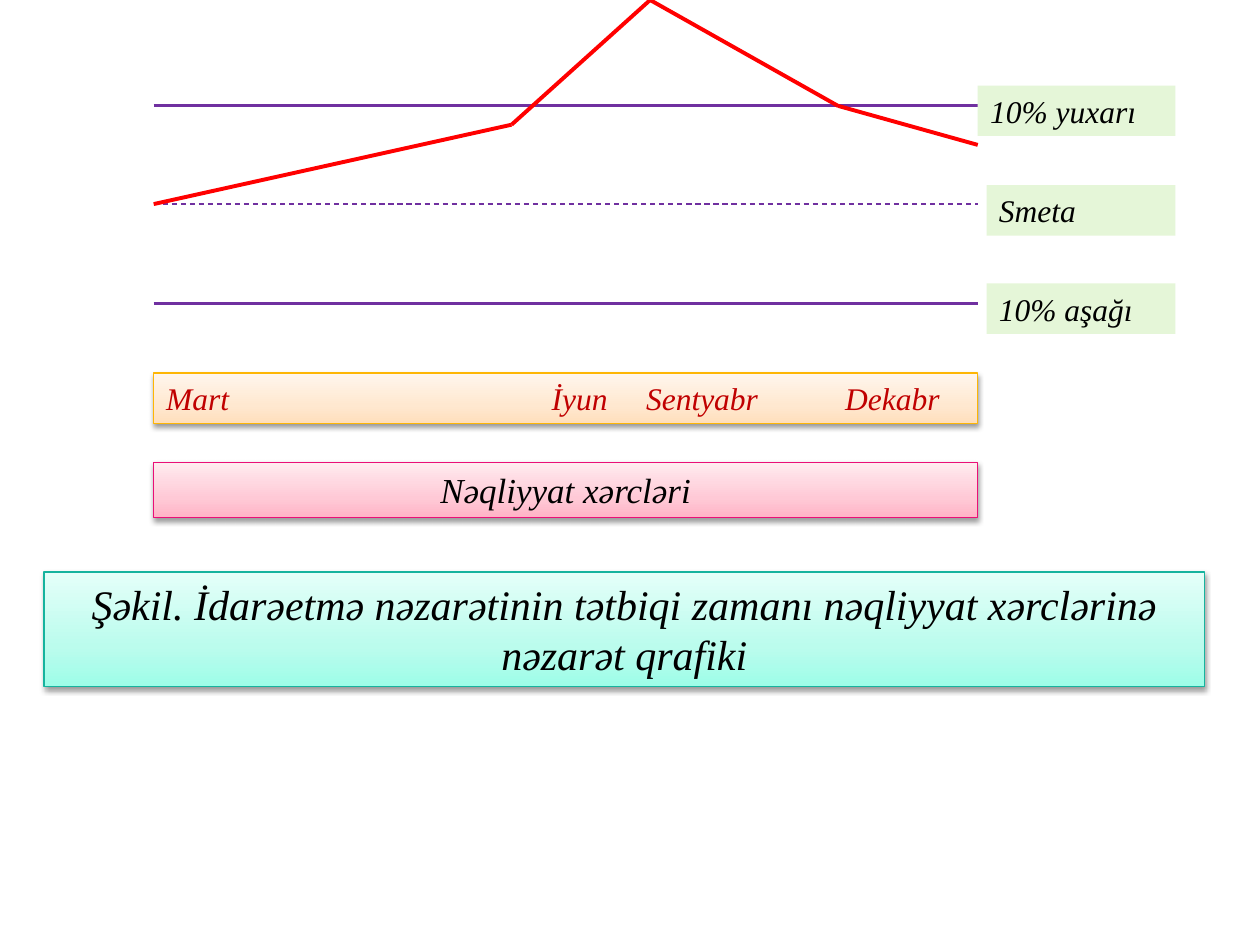
from copy import deepcopy
from dataclasses import dataclass
from itertools import pairwise

from lxml import etree
from pptx import Presentation
from pptx import util as u
from pptx.dml.color import RGBColor
from pptx.enum import dml, shapes, text
from pptx.oxml.ns import qn


@dataclass(frozen=True)
class Theme:
    font: str = "Times New Roman"
    ink: str = "000000"
    month: str = "C00000"
    limit: str = "7030A0"
    cost: str = "FF0000"
    tag: str = "E5F6D8"
    peach: tuple = ("FFDFBC", "FFE8D0", "FFF6ED")
    pink: tuple = ("FFB3C6", "FFC9D6", "FFEBEF")
    mint: tuple = ("9DFDE8", "BBFCED", "E4FFF9")
    gold: str = "FEB604"
    rose: str = "EA0F77"
    teal: str = "16B39E"
    small: int = 18
    mid: int = 20
    large: int = 24


T = Theme()
LEFT, RIGHT = 1.22, 7.76
STOPS = (0, 0.35, 1)


@dataclass(frozen=True)
class Box:
    words: str
    x: float
    y: float
    w: float
    h: float = 0.4
    size: int = T.small
    ink: str = T.ink
    mid: bool = False


@dataclass(frozen=True)
class Bar:
    box: Box
    grad: tuple
    edge: str
    tabs: tuple = ()


@dataclass(frozen=True)
class Limit:
    y: float
    width: float = 1.5
    dash: bool = False


LIMITS = [Limit(1.62, 0.75, True), Limit(0.84), Limit(2.41)]
COSTS = [(LEFT, 1.62), (4.06, 0.99), (5.16, 0), (6.65, 0.84), (RIGHT, 1.15)]
TAGS = [
    Box("10% yuxarı", 7.76, 0.68, 1.57),
    Box("Smeta", 7.83, 1.47, 1.5),
    Box("10% aşağı", 7.83, 2.25, 1.5),
]
BARS = [
    Bar(Box("Mart\tİyun\tSentyabr\tDekabr", LEFT, 2.96, RIGHT - LEFT, ink=T.month),
        T.peach, T.gold, (3.06, 3.81, 5.39)),
    Bar(Box("Nəqliyyat xərcləri", LEFT, 3.67, RIGHT - LEFT, 0.44, T.mid, mid=True),
        T.pink, T.rose),
    Bar(Box("Şəkil. İdarəetmə nəzarətinin tətbiqi zamanı nəqliyyat xərclərinə "
            "nəzarət qrafiki", 0.35, 4.54, 9.21, 0.91, T.large, mid=True),
        T.mint, T.teal),
]


def rgb(code: str) -> RGBColor:
    return RGBColor.from_string(code)


def draw_line(slide, start: tuple, end: tuple, color: str, width: float, dash: bool = False):
    line = slide.shapes.add_connector(
        shapes.MSO_CONNECTOR.STRAIGHT, *map(u.Inches, (*start, *end)))
    line.line.color.rgb = rgb(color)
    line.line.width = u.Pt(width)
    if dash:
        line.line.dash_style = dml.MSO_LINE.DASH
    etree.SubElement(line._element.spPr, qn("a:effectLst"))


def draw_box(slide, box: Box):
    shape = slide.shapes.add_textbox(*map(u.Inches, (box.x, box.y, box.w, box.h)))
    frame = shape.text_frame
    frame.word_wrap = True
    frame.auto_size = text.MSO_AUTO_SIZE.SHAPE_TO_FIT_TEXT
    para = frame.paragraphs[0]
    para.text = box.words
    para.alignment = text.PP_ALIGN.CENTER if box.mid else text.PP_ALIGN.LEFT
    font = para.font
    font.name, font.size, font.italic = T.font, u.Pt(box.size), True
    font.color.rgb = rgb(box.ink)
    return shape


def draw_tag(slide, box: Box):
    fill = draw_box(slide, box).fill
    fill.solid()
    fill.fore_color.rgb = rgb(T.tag)


def add_grad(shape, colors: tuple):
    shape.fill.gradient()
    shape.fill.gradient_angle = 90
    stops = shape._element.spPr.find(".//" + qn("a:gsLst"))
    stops.insert(1, deepcopy(stops[0]))
    for stop, place, color in zip(shape.fill.gradient_stops, STOPS, colors):
        stop.position = place
        stop.color.rgb = rgb(color)


def add_shadow(shape):
    shape.shadow.inherit = False
    group = shape._element.spPr.find(qn("a:effectLst"))
    outer = etree.SubElement(
        group, qn("a:outerShdw"), blurRad=str(u.Pt(3.1)), dist=str(u.Pt(1.6)),
        dir="5400000", rotWithShape="0")
    color = etree.SubElement(outer, qn("a:srgbClr"), val=T.ink)
    etree.SubElement(color, qn("a:alpha"), val="38000")


def add_tabs(shape, tabs: tuple):
    props = shape.text_frame.paragraphs[0]._p.get_or_add_pPr()
    group = etree.Element(qn("a:tabLst"))
    for tab in tabs:
        etree.SubElement(group, qn("a:tab"), pos=str(u.Inches(tab)), algn="l")
    props.find(qn("a:defRPr")).addprevious(group)


def draw_bar(slide, bar: Bar):
    shape = draw_box(slide, bar.box)
    add_grad(shape, bar.grad)
    shape.line.color.rgb = rgb(bar.edge)
    shape.line.width = u.Pt(0.75)
    add_shadow(shape)
    if bar.tabs:
        add_tabs(shape, bar.tabs)


def main():
    deck = Presentation()
    deck.slide_width, deck.slide_height = u.Inches(10), u.Inches(7.5)
    slide = deck.slides.add_slide(deck.slide_layouts[6])
    for limit in LIMITS:
        draw_line(slide, (LEFT, limit.y), (RIGHT, limit.y), T.limit, limit.width, limit.dash)
    for start, end in pairwise(COSTS):
        draw_line(slide, start, end, T.cost, 2.25)
    for tag in TAGS:
        draw_tag(slide, tag)
    for bar in BARS:
        draw_bar(slide, bar)
    deck.save("out.pptx")


if __name__ == "__main__":
    main()
